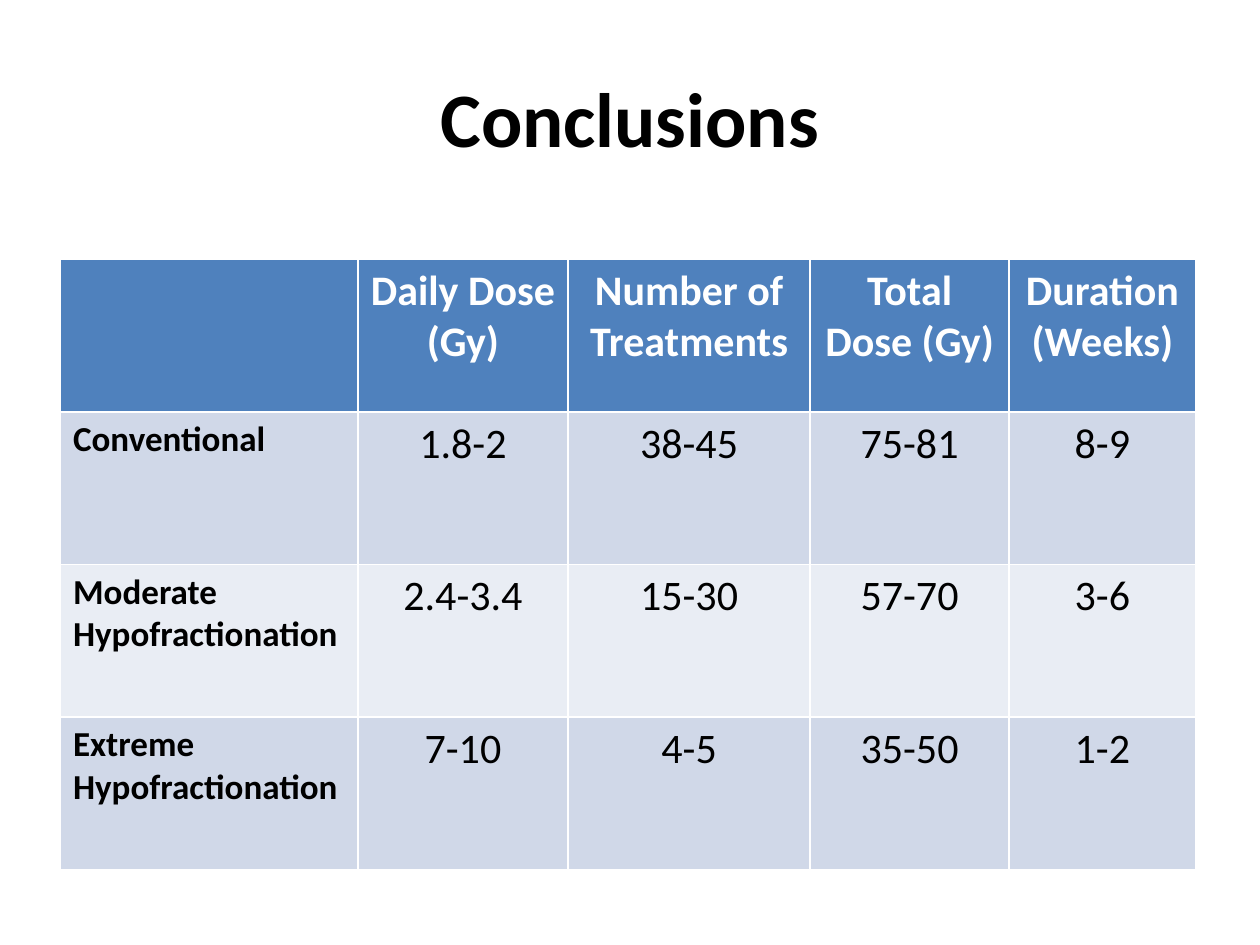
from pptx import Presentation
from pptx.dml.color import RGBColor
from pptx.enum import text as t
from pptx.util import Inches, Pt

BLACK = RGBColor(0x00, 0x00, 0x00)
WHITE = RGBColor(0xFF, 0xFF, 0xFF)
HEADER_BLUE = RGBColor(0x4F, 0x81, 0xBD)
BANDS = [RGBColor(0xD0, 0xD8, 0xE8), RGBColor(0xE9, 0xED, 0xF4)]

COLUMN_WIDTHS = [2.36, 1.67, 1.92, 1.58, 1.48]
ROW_HEIGHT = 1.21
REGIMENS = [
    ["", "Daily Dose (Gy)", "Number of Treatments", "Total Dose (Gy)", "Duration (Weeks)"],
    ["Conventional", "1.8-2", "38-45", "75-81", "8-9"],
    ["Moderate Hypofractionation", "2.4-3.4", "15-30", "57-70", "3-6"],
    ["Extreme Hypofractionation", "7-10", "4-5", "35-50", "1-2"],
]


def write(frame, words, size=24, color=BLACK, bold=False, align=t.PP_ALIGN.CENTER):
    paragraph = frame.paragraphs[0]
    paragraph.alignment = align
    run = paragraph.add_run()
    run.text = words
    run.font.name = "Calibri"
    run.font.size = Pt(size)
    run.font.bold = bold
    run.font.color.rgb = color


prs = Presentation()
prs.slide_width, prs.slide_height = Inches(10), Inches(7.5)
slide = prs.slides.add_slide(prs.slide_layouts[5])

title = slide.shapes.title
title.left, title.top = Inches(0.5), Inches(0.3)
title.width, title.height = Inches(9), Inches(1.25)
title.text_frame.vertical_anchor = t.MSO_ANCHOR.MIDDLE
write(title.text_frame, "Conclusions", size=44, bold=True)

# The default table style supplies the white borders and the thick header rule.
doses = slide.shapes.add_table(
    len(REGIMENS), len(COLUMN_WIDTHS), Inches(0.48), Inches(2.06),
    Inches(sum(COLUMN_WIDTHS)), Inches(ROW_HEIGHT * len(REGIMENS))).table
for column, width in zip(doses.columns, COLUMN_WIDTHS):
    column.width = Inches(width)

for r, regimen in enumerate(REGIMENS):
    doses.rows[r].height = Inches(ROW_HEIGHT)
    for c, words in enumerate(regimen):
        cell = doses.cell(r, c)
        cell.fill.solid()
        cell.fill.fore_color.rgb = BANDS[(r - 1) % 2] if r else HEADER_BLUE
        if not words:
            continue
        if r == 0:
            write(cell.text_frame, words, color=WHITE, bold=True)
        elif c == 0:
            write(cell.text_frame, words, size=20, bold=True, align=t.PP_ALIGN.LEFT)
        else:
            write(cell.text_frame, words)

prs.save("out.pptx")
